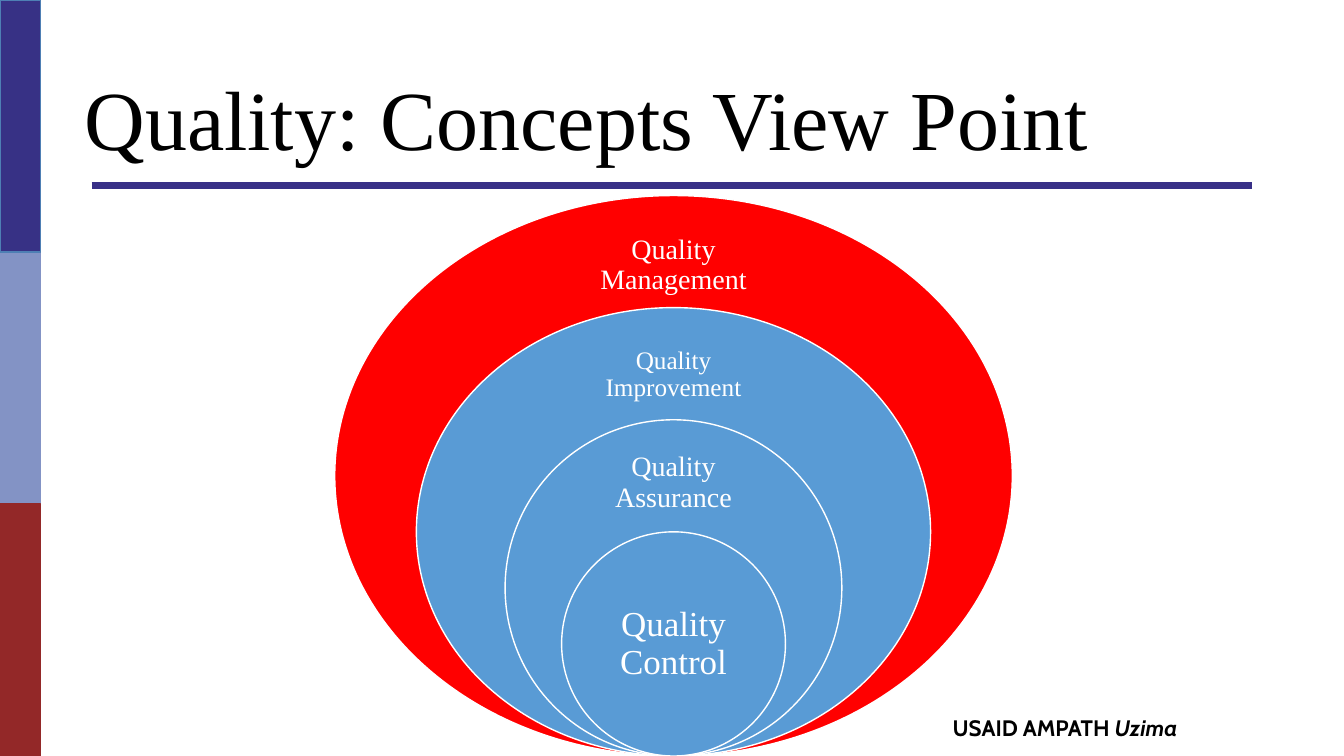
from dataclasses import dataclass

import pptx
import pptx.dml.color
import pptx.enum.shapes
import pptx.enum.text
import pptx.oxml.ns
import pptx.util
from lxml import etree

WIDTH, HEIGHT = 13.33, 7.5
RING_CENTER = 6.68
RING_STEP = 1.112
BAND_WIDTH = 0.4


@dataclass(frozen=True)
class Theme:
    serif: str = "Times New Roman"
    sans: str = "Cabin"
    ink: str = "000000"
    white: str = "FFFFFF"
    indigo: str = "373185"
    indigo_edge: str = "4E7FB4"
    rule: str = "383087"
    periwinkle: str = "8393C5"
    maroon: str = "932828"
    red: str = "FF0000"
    blue: str = "599BD5"
    title_size: int = 60
    footer_size: int = 16
    outline: float = 1
    rule_width: float = 4.5


THEME = Theme()
BANDS = [
    (1, THEME.periwinkle, THEME.periwinkle),
    (2, THEME.maroon, THEME.maroon),
    (0, THEME.indigo, THEME.indigo_edge),
]
RINGS = [
    ("Quality Management", 5, 6.72, THEME.red, 20, 1.88, 0.05, 0.15),
    ("Quality Improvement", 4, 5.1, THEME.blue, 18, 1.78, 0.06, 0.18),
    ("Quality Assurance", 3, 3.34, THEME.blue, 20, 1.55, 0.075, 0.225),
    ("Quality Control", 2, 2.22, THEME.blue, 25, 1.57, 0.25, 0.5),
]


def rgb(value):
    return pptx.dml.color.RGBColor.from_string(value)


def inches(*lengths):
    return [pptx.util.Inches(length) for length in lengths]


def style_font(font, family, size, color):
    font.name = family
    font.size = pptx.util.Pt(size)
    font.color.rgb = rgb(color)


def add_filled(slide, kind, box, fill, edge):
    figure = slide.shapes.add_shape(kind, *inches(*box))
    figure.shadow.inherit = False
    figure.fill.solid()
    figure.fill.fore_color.rgb = rgb(fill)
    figure.line.color.rgb = rgb(edge)
    figure.line.width = pptx.util.Pt(THEME.outline)


def add_text_frame(slide, box, side=0.1, upright=0.05):
    frame = slide.shapes.add_textbox(*inches(*box)).text_frame
    frame.word_wrap = True
    frame.margin_left = frame.margin_right = pptx.util.Inches(side)
    frame.margin_top = frame.margin_bottom = pptx.util.Inches(upright)
    return frame


def set_middle_text(frame, wording, size, color):
    frame.vertical_anchor = pptx.enum.text.MSO_ANCHOR.MIDDLE
    paragraph = frame.paragraphs[0]
    paragraph.text = wording
    paragraph.line_spacing = 0.9
    style_font(paragraph.font, THEME.serif, size, color)
    return paragraph


def add_bands(slide):
    band_height = HEIGHT / len(BANDS)
    for row, fill, edge in BANDS:
        box = (0, row * band_height, BAND_WIDTH, band_height)
        add_filled(slide, pptx.enum.shapes.MSO_SHAPE.RECTANGLE, box, fill, edge)


def add_rule(slide):
    rule = slide.shapes.add_connector(
        pptx.enum.shapes.MSO_CONNECTOR.STRAIGHT, *inches(0.91, 1.84, 12.42, 1.84)
    )
    rule.line.color.rgb = rgb(THEME.rule)
    rule.line.width = pptx.util.Pt(THEME.rule_width)
    etree.SubElement(rule._element.spPr, pptx.oxml.ns.qn("a:effectLst"))


def add_footer(slide):
    paragraph = add_text_frame(slide, (9.35, 7.04, 3.83, 0.36)).paragraphs[0]
    style_font(paragraph.font, THEME.sans, THEME.footer_size, THEME.ink)
    paragraph.font.bold = True
    for wording, italic in [("USAID AMPATH ", False), ("Uzima", True)]:
        run = paragraph.add_run()
        run.text = wording
        run.font.italic = italic


def add_title(slide):
    frame = add_text_frame(slide, (0.74, 0.76, 10.74, 0.93))
    set_middle_text(frame, "Quality: Concepts View Point", THEME.title_size, THEME.ink)


def add_ring(slide, wording, steps, width, fill, size, label_width, drop, share):
    height = steps * RING_STEP
    top = HEIGHT - height
    ring_box = (RING_CENTER - width / 2, top, width, height)
    add_filled(slide, pptx.enum.shapes.MSO_SHAPE.OVAL, ring_box, fill, THEME.white)
    label_box = (
        RING_CENTER - label_width / 2,
        top + drop * height,
        label_width,
        share * height,
    )
    inset = size / 128
    label = set_middle_text(
        add_text_frame(slide, label_box, inset, inset), wording, size, THEME.white
    )
    label.alignment = pptx.enum.text.PP_ALIGN.CENTER


def main():
    deck = pptx.Presentation()
    deck.slide_width, deck.slide_height = inches(WIDTH, HEIGHT)
    slide = deck.slides.add_slide(deck.slide_layouts[6])
    add_bands(slide)
    add_rule(slide)
    add_footer(slide)
    add_title(slide)
    for ring in RINGS:
        add_ring(slide, *ring)
    deck.save("out.pptx")


if __name__ == "__main__":
    main()
